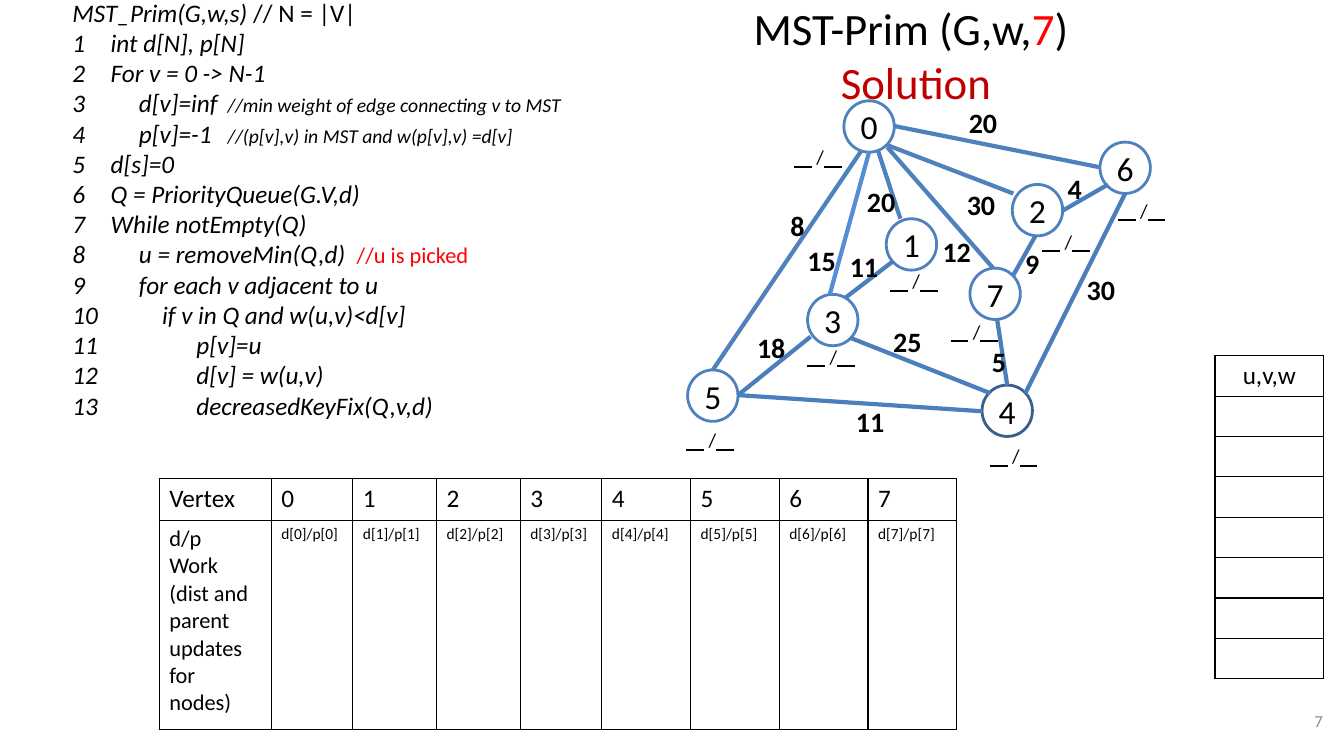
from lxml import etree
from pptx import Presentation
from pptx.dml.color import RGBColor
from pptx.enum.shapes import MSO_CONNECTOR, MSO_SHAPE
from pptx.enum.text import MSO_ANCHOR, PP_ALIGN
from pptx.oxml.ns import qn
from pptx.util import Inches, Pt

STRAIGHT = MSO_CONNECTOR.STRAIGHT
OVAL = MSO_SHAPE.OVAL
MIDDLE = MSO_ANCHOR.MIDDLE
CENTER, RIGHT = PP_ALIGN.CENTER, PP_ALIGN.RIGHT

BLACK = RGBColor(0x00, 0x00, 0x00)
RED = RGBColor(0xFF, 0x00, 0x00)
DARK_RED = RGBColor(0xC0, 0x00, 0x00)
GRAY = RGBColor(0x8C, 0x8C, 0x8C)
BLUE = RGBColor(0x4F, 0x81, 0xBD)
MID_BLUE = RGBColor(0x4B, 0x7E, 0xBC)
LIGHT_BLUE = RGBColor(0x55, 0x8E, 0xD5)
DARK_BLUE = RGBColor(0x3A, 0x5F, 0x8C)


def add_run(paragraph, text, size, color=BLACK, bold=False, italic=False, underline=False):
    run = paragraph.add_run()
    run.text = text
    font = run.font
    font.name, font.size, font.color.rgb = "Calibri", Pt(size), color
    font.bold, font.italic, font.underline = bold, italic, underline


def add_text_box(left, top, width, height, wrap=False):
    """Add an empty text box and return its text frame."""
    box = slide.shapes.add_textbox(Inches(left), Inches(top), Inches(width), Inches(height))
    box.text_frame.word_wrap = wrap
    return box.text_frame


presentation = Presentation()
presentation.slide_width = Inches(13.33)
presentation.slide_height = Inches(7.5)
slide = presentation.slides.add_slide(presentation.slide_layouts[6])

# Title and slide number
title = add_text_box(6.5, -0.08, 5.17, 1.25, wrap=True)
title.vertical_anchor = MIDDLE
paragraph = title.paragraphs[0]
paragraph.alignment = CENTER
add_run(paragraph, "MST-Prim (G,w,", 32)
add_run(paragraph, "7", 32, RED)
add_run(paragraph, ") ", 32)
paragraph.add_line_break()
add_run(paragraph, "Solution", 32, DARK_RED)

slide_number = add_text_box(10.11, 6.95, 3.11, 0.4, wrap=True)
slide_number.vertical_anchor = MIDDLE
paragraph = slide_number.paragraphs[0]
paragraph.alignment = RIGHT
add_run(paragraph, "7", 12, GRAY)

# Vertices: label, left, top, outline, left and top of the d/p blank
vertices = [
    ("0", 8.37, 1.00, BLUE, 7.78, 1.39),
    ("1", 8.79, 2.17, BLUE, 8.73, 2.62),
    ("2", 10.04, 1.83, BLUE, 10.24, 2.23),
    ("3", 8.01, 2.92, BLUE, 7.91, 3.37),
    ("4", 9.74, 3.82, DARK_BLUE, 9.72, 4.36),
    ("5", 6.82, 3.67, BLUE, 6.71, 4.20),
    ("6", 10.91, 1.41, BLUE, 10.99, 1.92),
    ("7", 9.62, 2.66, BLUE, 9.33, 3.12),
]
for label, left, top, outline, blank_left, blank_top in vertices:
    vertex = slide.shapes.add_shape(OVAL, Inches(left), Inches(top), Inches(0.5), Inches(0.51))
    vertex.shadow.inherit = False
    vertex.fill.background()
    vertex.line.color.rgb = outline
    vertex.line.width = Pt(2)
    text_frame = vertex.text_frame
    text_frame.word_wrap = False
    text_frame.vertical_anchor = MIDDLE
    text_frame.margin_left = text_frame.margin_right = 0
    text_frame.margin_top = text_frame.margin_bottom = 0
    text_frame.paragraphs[0].alignment = CENTER
    add_run(text_frame.paragraphs[0], label, 24)

    paragraph = add_text_box(blank_left, blank_top, 0.67, 0.34).paragraphs[0]
    blank = " " * 4
    add_run(paragraph, blank, 14, underline=True)
    add_run(paragraph, " /", 14)
    add_run(paragraph, blank, 14, underline=True)

# Edges: start, end, color, weight, left and top of the weight
edges = [
    ((8.87, 1.25), (10.91, 1.66), BLUE, "20", 9.51, 1.00),
    ((8.80, 1.44), (10.05, 1.92), BLUE, "30", 9.49, 1.81),
    ((8.71, 1.50), (8.93, 2.17), BLUE, "20", 8.50, 1.78),
    ((8.54, 1.50), (7.07, 3.67), BLUE, "8", 7.74, 2.02),
    ((8.80, 1.46), (9.85, 2.66), BLUE, "12", 9.25, 2.28),
    ((8.62, 1.51), (8.23, 2.92), LIGHT_BLUE, "15", 7.91, 2.37),
    ((8.39, 2.95), (8.86, 2.59), MID_BLUE, "11", 8.33, 2.43),
    ((7.32, 3.92), (8.04, 3.34), MID_BLUE, "18", 7.41, 3.23),
    ((7.32, 3.92), (9.74, 4.08), MID_BLUE, "11", 8.39, 3.96),
    ((8.43, 3.35), (9.82, 3.90), MID_BLUE, "25", 8.76, 3.17),
    ((9.89, 3.17), (9.99, 3.82), MID_BLUE, "5", 9.74, 3.37),
    ((11.16, 1.92), (10.17, 3.90), MID_BLUE, "30", 10.68, 2.65),
    ((10.05, 2.73), (10.27, 2.34), MID_BLUE, "9", 10.07, 2.40),
    ((10.54, 2.09), (10.99, 1.83), MID_BLUE, "4", 10.49, 1.65),
]
for start, end, color, weight, left, top in edges:
    edge = slide.shapes.add_connector(STRAIGHT, *map(Inches, start + end))
    edge.line.color.rgb = color
    edge.line.width = Pt(3)
    etree.SubElement(edge._element.spPr, qn("a:effectLst"))
    width = 0.34 if len(weight) == 1 else 0.49
    add_run(add_text_box(left, top, width, 0.44).paragraphs[0], weight, 20, bold=True)

# Numbered pseudocode: code indent, code, then comment, its tab stop, size, color, italic
code_lines = [
    (0, "int d[N], p[N]", None),
    (0, "For v = 0 -> N-1", None),
    (0.28, "d[v]=inf", ("//min weight of edge connecting v to MST", 1.54, 14, BLACK, True)),
    (0.28, "p[v]=-1", ("//(p[v],v) in MST and w(p[v],v) =d[v]", 1.54, 14, BLACK, True)),
    (0, "d[s]=0", None),
    (0, "Q = PriorityQueue(G.V,d)", None),
    (0, "While notEmpty(Q)", None),
    (0.28, "u = removeMin(Q,d)", ("//u is picked", 2.82, 16, RED, False)),
    (0.28, "for each v adjacent to u", None),
    (0.51, "if v in Q and w(u,v)<d[v]", None),
    (0.85, "p[v]=u", None),
    (0.85, "d[v] = w(u,v)", None),
    (0.85, "decreasedKeyFix(Q,v,d)", None),
]
pseudocode = add_text_box(0.62, -0.08, 5.3, 4.34, wrap=True)
add_run(pseudocode.paragraphs[0], "MST_Prim(G,w,s) ", 18, italic=True)
add_run(pseudocode.paragraphs[0], "// N = |V|", 18)
for indent, code, comment in code_lines:
    paragraph = pseudocode.add_paragraph()
    add_run(paragraph, code, 18, italic=True)
    properties = paragraph._p.get_or_add_pPr()
    margin = Inches(0.38 + indent)
    properties.set("marL", str(margin))
    properties.set("indent", str(-margin))
    etree.SubElement(properties, qn("a:buAutoNum"), type="arabicPlain")
    if comment:
        text, tab_stop, size, color, italic = comment
        tabs = etree.SubElement(properties, qn("a:tabLst"))
        etree.SubElement(tabs, qn("a:tab"), pos=str(Inches(tab_stop)), algn="l")
        add_run(paragraph, "\t" + text, size, color, italic=italic)

# Tables: left, top, column widths, row heights, rows of (text, size), alignment
names = range(8)
tables = [
    (12.05, 3.53, [1.08], [0.4] * 8, [[("u,v,w", 18)]] + [[("", 18)]] * 7, CENTER),
    (1.58, 4.75, [1.11, 0.81, 0.83, 0.83, 0.81, 0.88, 0.88, 0.88, 0.88], [0.41, 2.08],
     [[("Vertex", 18)] + [(f"{name}", 18) for name in names],
      [("d/p\nWork\n(dist and parent updates for nodes)", 16)]
      + [(f"d[{name}]/p[{name}]", 11) for name in names]], None),
]
for left, top, widths, heights, rows, alignment in tables:
    table = slide.shapes.add_table(
        len(heights), len(widths), Inches(left), Inches(top),
        Inches(sum(widths)), Inches(sum(heights))).table
    table.first_row = table.horz_banding = False
    for column, width in zip(table.columns, widths):
        column.width = Inches(width)
    for row, height, contents in zip(table.rows, heights, rows):
        row.height = Inches(height)
        for cell, (text, size) in zip(row.cells, contents):
            cell.text_frame.text = text
            for paragraph in cell.text_frame.paragraphs:
                paragraph.alignment = alignment
                paragraph.font.size = Pt(size)
                for run in paragraph.runs:
                    run.font.name, run.font.size = "Calibri", Pt(size)
                    run.font.color.rgb = BLACK
            cell_properties = cell._tc.get_or_add_tcPr()
            for side in ("a:lnL", "a:lnR", "a:lnT", "a:lnB"):
                border = etree.SubElement(cell_properties, qn(side), w=str(Pt(1)))
                border_fill = etree.SubElement(border, qn("a:solidFill"))
                etree.SubElement(border_fill, qn("a:srgbClr"), val=str(BLACK))
            cell.fill.background()

presentation.save("out.pptx")
